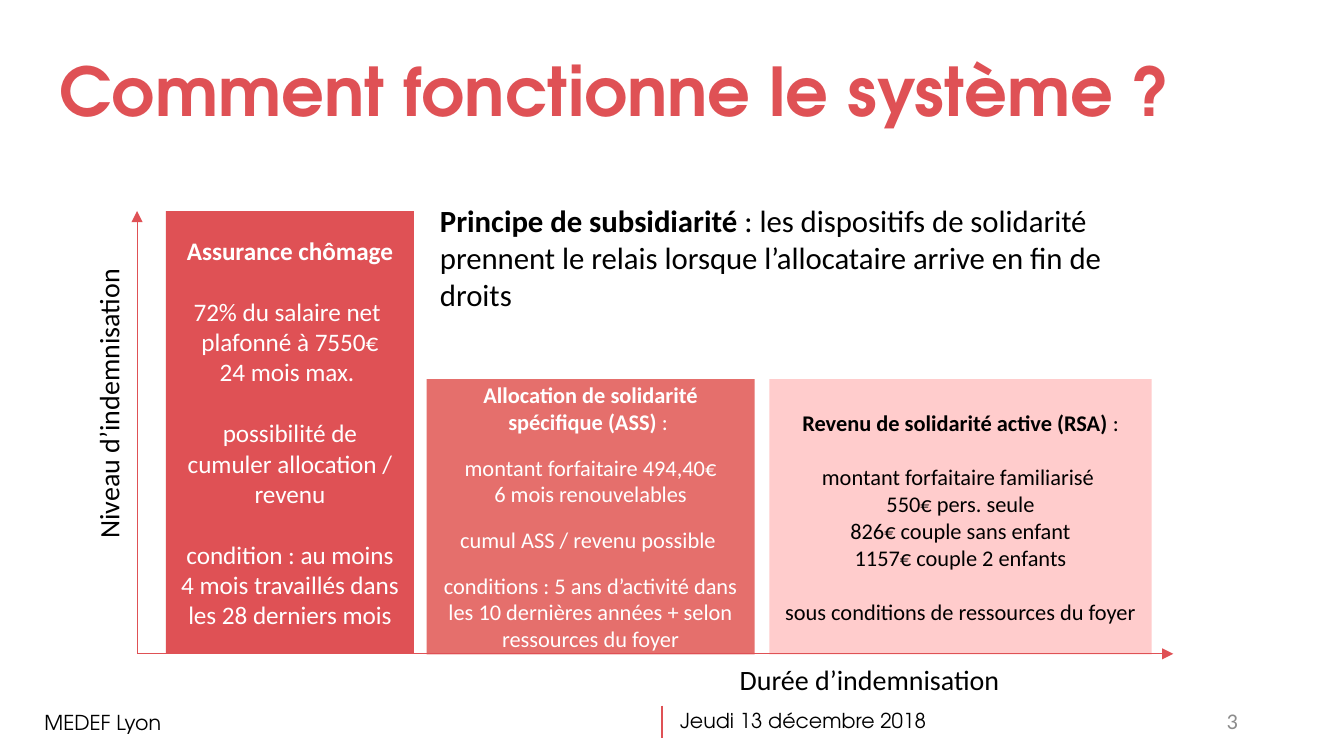
from dataclasses import dataclass

from lxml.etree import SubElement
from pptx import Presentation
from pptx.dml.color import RGBColor
from pptx.enum.shapes import MSO_CONNECTOR as Connector, MSO_SHAPE as Shape
from pptx.enum.text import MSO_ANCHOR as Anchor, PP_ALIGN as Align
from pptx.oxml.ns import qn
from pptx.util import Emu, Pt

PX = 4572  # 200 px to the inch
COLORS = {
    "red": "DF5155",
    "mid": "E56F6C",
    "pale": "FFCCCC",
    "black": "000000",
    "white": "FFFFFF",
    "gray": "8C8C8C",
}
BODY, DISPLAY = "Calibri", "TeX Gyre Adventor"
BASE, AXIS_X, AXIS_TOP, AXIS_END = 973, 204, 314, 1746


@dataclass(frozen=True)
class Box:
    x: int
    y: int
    w: int
    h: int

    def emu(self) -> list[Emu]:
        return [px(v) for v in (self.x, self.y, self.w, self.h)]


@dataclass(frozen=True)
class Style:
    size: float
    font: str = BODY
    color: str = "black"
    align: Align = Align.LEFT


@dataclass(frozen=True)
class Scheme:
    """One benefit: a bar with a bold heading and groups of lines."""
    box: Box
    fill: str
    style: Style
    gap: float
    heading: str
    suffix: str
    groups: tuple[tuple[str, ...], ...]


@dataclass(frozen=True)
class Label:
    box: Box
    text: str
    style: Style
    bold: str = ""
    anchor: Anchor = Anchor.TOP
    rotation: int = 0
    insets: tuple[int, int, int, int] = (20, 10, 20, 10)
    spacing: float = 1.0


def px(v: int) -> Emu:
    return Emu(v * PX)


def rgb(name: str) -> RGBColor:
    return RGBColor.from_string(COLORS[name])


def write(p, style: Style, text: str, bold: str = "") -> None:
    """Fill a paragraph with an optional bold lead and plain text."""
    p.alignment = style.align
    p.font.size = Pt(style.size)
    p.font.name = style.font
    p.font.color.rgb = rgb(style.color)
    for part, is_bold in ((bold, True), (text, False)):
        if part:
            r = p.add_run()
            r.text = part
            r.font.bold = is_bold


def add_scheme(s, scheme: Scheme) -> None:
    sp = s.shapes.add_shape(Shape.RECTANGLE, *scheme.box.emu())
    sp.shadow.inherit = False
    sp.fill.solid()
    sp.fill.fore_color.rgb = rgb(scheme.fill)
    sp.line.fill.background()
    tf = sp.text_frame
    tf.word_wrap = True
    tf.vertical_anchor = Anchor.MIDDLE
    write(tf.paragraphs[0], scheme.style, scheme.suffix, scheme.heading)
    for group in scheme.groups:
        for i, line in enumerate(group):
            p = tf.add_paragraph()
            if i == 0:
                p.space_before = Pt(scheme.gap)
            write(p, scheme.style, line)


def add_label(s, label: Label) -> None:
    sp = s.shapes.add_textbox(*label.box.emu())
    sp.rotation = label.rotation
    tf = sp.text_frame
    tf.word_wrap = True
    tf.vertical_anchor = label.anchor
    (tf.margin_left, tf.margin_top,
     tf.margin_right, tf.margin_bottom) = map(px, label.insets)
    p = tf.paragraphs[0]
    if label.spacing != 1:
        p.line_spacing = label.spacing
    write(p, label.style, label.text, label.bold)


def add_line(s, x1: int, y1: int, x2: int, y2: int, width: float, arrow: bool = False) -> None:
    cx = s.shapes.add_connector(Connector.STRAIGHT, *map(px, (x1, y1, x2, y2)))
    cx.line.color.rgb = rgb("red")
    cx.line.width = Pt(width)
    sp_pr = cx._element.spPr
    if arrow:
        SubElement(sp_pr.get_or_add_ln(), qn("a:tailEnd"), type="triangle")
    SubElement(sp_pr, qn("a:effectLst"))


WHITE_13 = Style(13.5, color="white", align=Align.CENTER)
WHITE_12 = Style(12, color="white", align=Align.CENTER)
BLACK_12 = Style(12, align=Align.CENTER)
FOOTER = Style(11, DISPLAY)
AXIS = Style(15)

SCHEMES = [
    Scheme(Box(1145, 564, 569, 410), "pale", BLACK_12, 14.6,
           "Revenu de solidarité active (RSA)", " :", (
               ("montant forfaitaire familiarisé ", "550€ pers. seule",
                "826€ couple sans enfant", "1157€ couple 2 enfants"),
               ("sous conditions de ressources du foyer",),
           )),
    Scheme(Box(247, AXIS_TOP, 369, 659), "red", WHITE_13, 16.5,
           "Assurance chômage", "", (
               ("72% du salaire net ", "plafonné à 7550€", "24 mois max. "),
               ("possibilité de cumuler allocation / revenu",),
               ("condition : au moins 4 mois travaillés dans les 28 derniers mois",),
           )),
    Scheme(Box(635, 564, 488, 410), "mid", WHITE_12, 10,
           "Allocation de solidarité spécifique (ASS)", " : ", (
               ("montant forfaitaire 494,40€", "6 mois renouvelables"),
               ("cumul ASS / revenu possible ",),
               ("conditions : 5 ans d’activité dans les 10 dernières années"
                " + selon ressources du foyer",),
           )),
]

LABELS = [
    Label(Box(58, 1048, 918, 52), "MEDEF Lyon", FOOTER, insets=(8, 8, 8, 8)),
    Label(Box(996, 1046, 418, 52), "Jeudi 13 décembre 2018", FOOTER, insets=(16, 8, 8, 8)),
    Label(Box(69, 93, 1724, 96), "", Style(36, DISPLAY, "red"),
          bold="Comment fonctionne le système ?", anchor=Anchor.MIDDLE, spacing=0.9),
    Label(Box(1412, 1043, 450, 60), "3", Style(12, color="gray", align=Align.RIGHT),
          anchor=Anchor.MIDDLE),
    Label(Box(-169, 456, 660, 70), "Niveau d’indemnisation", AXIS, rotation=270),
    Label(Box(1081, 976, 660, 70), "Durée d’indemnisation", AXIS),
    Label(Box(635, 290, 1078, 186),
          " : les dispositifs de solidarité prennent le relais lorsque"
          " l’allocataire arrive en fin de droits",
          Style(16.5), bold="Principe de subsidiarité"),
]


def main() -> None:
    prs = Presentation()
    prs.slide_width, prs.slide_height = px(2000), px(1125)
    s = prs.slides.add_slide(prs.slide_layouts[6])
    for scheme in SCHEMES:
        add_scheme(s, scheme)
    add_line(s, 985, 1050, 985, 1098, 1)
    add_line(s, AXIS_X, BASE, AXIS_X, AXIS_TOP, 0.5, arrow=True)
    add_line(s, AXIS_X, BASE, AXIS_END, BASE, 0.5, arrow=True)
    for label in LABELS:
        add_label(s, label)
    prs.save("out.pptx")


if __name__ == "__main__":
    main()
